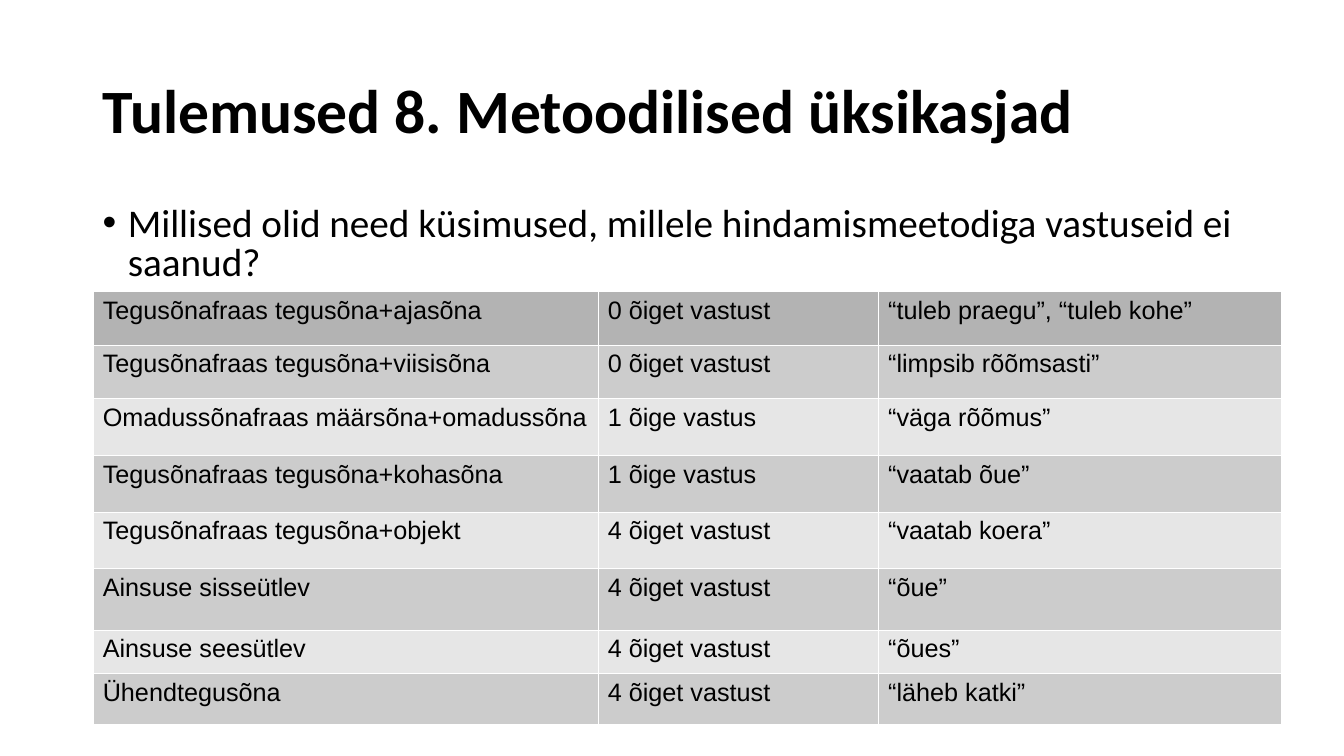
from pptx import Presentation
from pptx.dml.color import RGBColor as RGB
from pptx.enum.text import MSO_ANCHOR as Anchor
from pptx.oxml import parse_xml as to_xml
from pptx.oxml.ns import nsdecls
from pptx.util import Inches, Pt

WIDE, HIGH = Inches(13.33), Inches(7.5)
BLACK = RGB(0, 0, 0)
HEAD = RGB(0xB3, 0xB3, 0xB3)
BANDS = RGB(0xE6, 0xE6, 0xE6), RGB(0xCC, 0xCC, 0xCC)
LEFT = 6.9
COLS = 37.58, 20.86, 30.01
ROWS = 7.07, 7.07, 7.6, 7.47, 7.47, 8.13, 5.73, 6.67
TITLE = "Tulemused 8. Metoodilised üksikasjad"
ASK = "Millised olid need küsimused, millele hindamismeetodiga vastuseid ei saanud?"
DATA = (
    ("Tegusõnafraas tegusõna+ajasõna", "0 õiget vastust", "“tuleb praegu”, “tuleb kohe”"),
    ("Tegusõnafraas tegusõna+viisisõna", "0 õiget vastust", "“limpsib rõõmsasti”"),
    ("Omadussõnafraas määrsõna+omadussõna", "1 õige vastus", "“väga rõõmus”"),
    ("Tegusõnafraas tegusõna+kohasõna", "1 õige vastus", "“vaatab õue”"),
    ("Tegusõnafraas tegusõna+objekt", "4 õiget vastust", "“vaatab koera”"),
    ("Ainsuse sisseütlev", "4 õiget vastust", "“õue”"),
    ("Ainsuse seesütlev", "4 õiget vastust", "“õues”"),
    ("Ühendtegusõna", "4 õiget vastust", "“läheb katki”"),
)


def across(share):
    return round(WIDE * share / 100)


def down(share):
    return round(HIGH * share / 100)


def place(left, top, width, height):
    return across(left), down(top), across(width), down(height)


def write(frame, text, face, size, bold=False):
    para = frame.paragraphs[0]
    para.text = text
    font = para.runs[0].font
    font.name, font.size, font.bold = face, Pt(size), bold
    font.color.rgb = BLACK
    return para


def add_text(slide, area, text, size, bold=False):
    frame = slide.shapes.add_textbox(*area).text_frame
    frame.word_wrap = True
    return frame, write(frame, text, "Calibri", size, bold)


def add_title(slide):
    frame, para = add_text(slide, place(LEFT, 5.33, 86.27, 19.33), TITLE, 44, True)
    frame.vertical_anchor = Anchor.MIDDLE
    para.line_spacing = 0.9


def add_bullet(slide):
    frame, para = add_text(slide, place(LEFT, 26.67, 88.45, 73.33), ASK, 28)
    para.line_spacing = Pt(27.6)
    para.space_before = Pt(10)
    props = para._p.get_or_add_pPr()
    props.set("marL", str(Inches(0.25)))
    props.set("indent", str(-Inches(0.25)))
    props.append(to_xml(f'<a:buFont {nsdecls("a")} typeface="Arial"/>'))
    props.append(to_xml(f'<a:buChar {nsdecls("a")} char="•"/>'))


def add_edges(cell):
    props = cell._tc.get_or_add_tcPr()
    for spot, side in enumerate("LRTB"):
        props.insert(spot, to_xml(
            f'<a:ln{side} {nsdecls("a")} w="{Pt(0.06)}"><a:solidFill>'
            f'<a:srgbClr val="FFFFFF"/></a:solidFill></a:ln{side}>'))


def fill_cell(cell, text, color):
    write(cell.text_frame, text, "Arial", 18)
    cell.fill.solid()
    cell.fill.fore_color.rgb = color
    add_edges(cell)


def add_grid(slide):
    area = place(LEFT, 38.53, sum(COLS), sum(ROWS))
    table = slide.shapes.add_table(len(ROWS), len(COLS), *area).table
    table.first_row = table.horz_banding = False
    for col, share in zip(table.columns, COLS):
        col.width = across(share)
    for index, (row, share, texts) in enumerate(zip(table.rows, ROWS, DATA)):
        row.height = down(share)
        color = BANDS[index % 2] if index else HEAD
        for cell, text in zip(row.cells, texts):
            fill_cell(cell, text, color)


def main():
    deck = Presentation()
    deck.slide_width, deck.slide_height = WIDE, HIGH
    slide = deck.slides.add_slide(deck.slide_layouts[6])
    add_title(slide)
    add_bullet(slide)
    add_grid(slide)
    deck.save("out.pptx")


if __name__ == "__main__":
    main()
